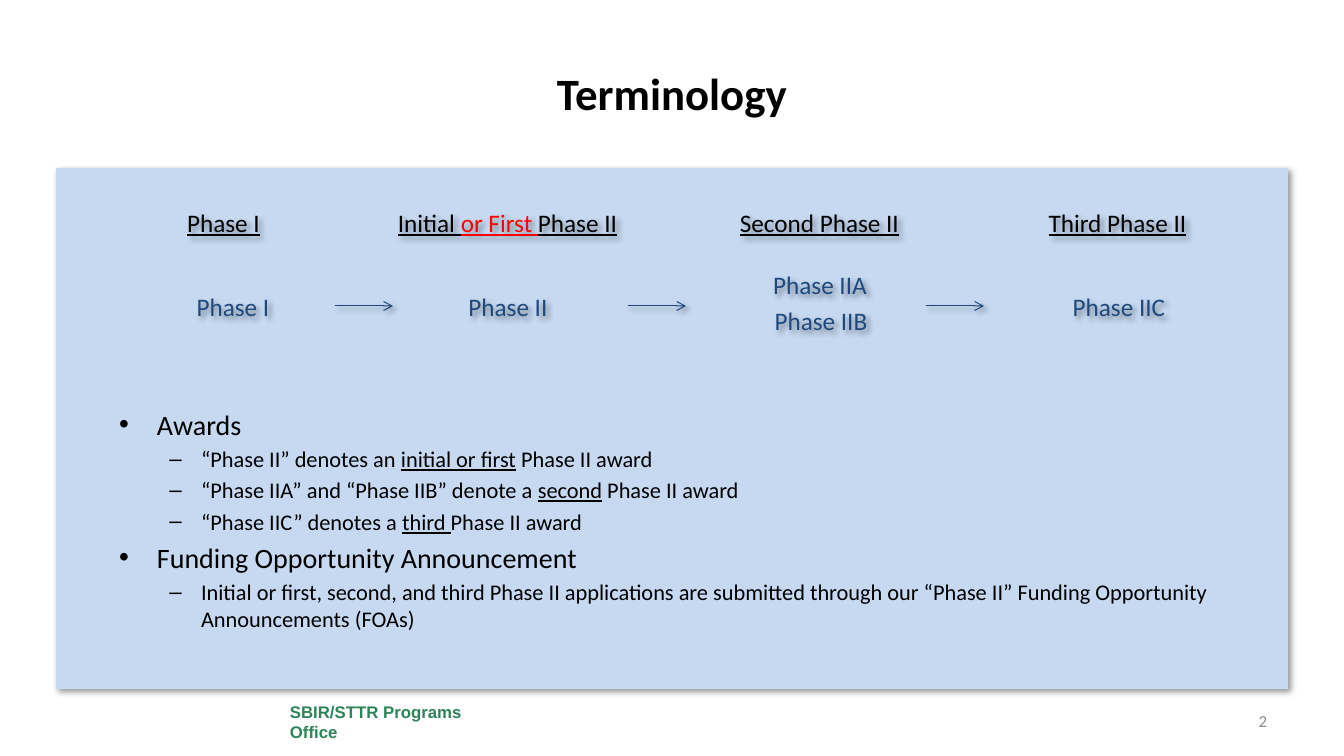
import pptx
import pptx.dml.color
import pptx.enum.shapes
import pptx.enum.text
import pptx.oxml
import pptx.oxml.ns
import pptx.util

PX = 914400 / 100.8  # EMU in one px
COLOURS = {
    "panel": "C6D9F1", "white": "FFFFFF", "black": "000000", "red": "FF0000",
    "navy": "1F497D", "green": "2C8458", "grey": "8C8C8C",
}
ALIGN = pptx.enum.text.PP_ALIGN
ANCHOR = pptx.enum.text.MSO_ANCHOR
RECTANGLE = pptx.enum.shapes.MSO_SHAPE.RECTANGLE
SHADOW = (
    f'<a:effectLst {pptx.oxml.ns.nsdecls("a")}>'
    '<a:outerShdw blurRad="50800" dist="38100" dir="2700000" algn="tl" rotWithShape="0">'
    f'<a:srgbClr val="{COLOURS["black"]}"><a:alpha val="40000"/></a:srgbClr>'
    '</a:outerShdw></a:effectLst>'
)

# Heading runs, then terms as (offset x, offset y, text) from the heading's corner
PHASES = [
    (90, [("Phase I", "black")], [(28, 86, "Phase I")]),
    (374, [("Initial ", "black"), ("or First ", "red"), ("Phase II", "black")],
     [(19, 86, "Phase II")]),
    (686, [("Second Phase II", "black")],
     [(19, 64, "Phase IIA"), (20, 100, "Phase IIB")]),
    (984, [("Third Phase II", "black")], [(20, 86, "Phase IIC")]),
]
# Level and runs of each list item; every second run is underlined
ITEMS = [
    (0, ["Awards"]),
    (1, ["“Phase II” denotes an ", "initial or first", " Phase II award"]),
    (1, ["“Phase IIA” and “Phase IIB” denote a ", "second", " Phase II award"]),
    (1, ["“Phase IIC” denotes a ", "third ", "Phase II award"]),
    (0, ["Funding Opportunity Announcement"]),
    (1, ["Initial or first, second, and third Phase II applications are submitted "
         "through our “Phase II” Funding Opportunity Announcements (FOAs)"]),
]


def px(*lengths):
    return [round(length * PX) for length in lengths]


def colour(name):
    return pptx.dml.color.RGBColor.from_string(COLOURS[name])


def add_shadow(shape):
    shape.element.spPr.append(pptx.oxml.parse_xml(SHADOW))


def add_run(para, text, size, tint, **formats):
    span = para.add_run()
    span.text = text
    span.font.color.rgb = colour(tint)
    values = {"name": "Calibri", "size": pptx.util.Pt(size), **formats}
    for name, value in values.items():
        setattr(span.font, name, value)


def set_frame(shape, anchor):
    frame = shape.text_frame
    values = {"word_wrap": True, "vertical_anchor": anchor,
              "auto_size": pptx.enum.text.MSO_AUTO_SIZE.NONE}
    for name, value in values.items():
        setattr(frame, name, value)
    return frame.paragraphs[0]


def add_label(page, box, align, anchor=ANCHOR.MIDDLE):
    label = page.shapes.add_textbox(*px(*box))
    para = set_frame(label, anchor)
    para.alignment = align
    return label, para


def add_rectangle(page, box, fill):
    shape = page.shapes.add_shape(RECTANGLE, *px(*box))
    shape.fill.solid()
    shape.fill.fore_color.rgb = colour(fill)
    shape.line.fill.background()
    return shape


def place(placeholder, box):
    """Move a placeholder to the box and to the front."""
    names = ("left", "top", "width", "height")
    for name, value in zip(names, px(*box)):
        setattr(placeholder, name, value)
    placeholder.element.getparent().append(placeholder.element)


def add_title(page, box):
    place(page.shapes.title, box)
    para = set_frame(page.shapes.title, ANCHOR.MIDDLE)
    para.alignment = ALIGN.CENTER
    add_run(para, "Terminology", 32, "black", bold=True)


def add_footer(page, box):
    left, top, width, height = box
    # Office name
    office = add_rectangle(page, (left, top, 213, height), "white")
    office.shadow.inherit = False
    para = set_frame(office, ANCHOR.MIDDLE)
    para.alignment = ALIGN.LEFT
    add_run(para, "SBIR/STTR Programs Office", 12, "green", name="Arial", bold=True)
    # Page number
    para = add_label(page, (left + width - 213, top + 3, 213, 40), ALIGN.RIGHT)[1]
    add_run(para, "2", 12, "grey")


def add_arrow(page, left, top):
    arrow = page.shapes.add_connector(
        pptx.enum.shapes.MSO_CONNECTOR.STRAIGHT, *px(left, top, left + 58, top))
    arrow.line.color.rgb = colour("navy")
    arrow.line.width = pptx.util.Pt(0.75)
    arrow.line._get_or_add_ln().append(pptx.oxml.parse_xml(
        f'<a:tailEnd {pptx.oxml.ns.nsdecls("a")} type="arrow"/>'))
    add_shadow(arrow)


def add_phases(page, box):
    top = box[1]
    for left, heading, terms in PHASES:
        label, para = add_label(page, (left, top, 267, 44), ALIGN.CENTER)
        add_shadow(label)
        for text, tint in heading:
            add_run(para, text, 18, tint, underline=True)
        for across, down, text in terms:
            label, para = add_label(page, (left + across, top + down, 230, 40),
                                    ALIGN.CENTER, ANCHOR.TOP)
            add_shadow(label)
            add_run(para, text, 18, "navy")
    for left in (335, 628, 926):
        add_arrow(page, left, top + 106)


def add_list(page, box):
    body = page.placeholders[1]
    place(body, box)
    para = set_frame(body, ANCHOR.TOP)
    para.space_before = pptx.util.Pt(0)
    for index, (level, texts) in enumerate(ITEMS):
        if index:
            para = body.text_frame.add_paragraph()
        para.level = level
        for position, text in enumerate(texts):
            add_run(para, text, 16 if level else 20, "black",
                    underline=position % 2 == 1)


def main():
    deck = pptx.Presentation()
    deck.slide_width, deck.slide_height = px(1344, 756)
    page = deck.slides.add_slide(deck.slide_layouts[1])
    add_shadow(add_rectangle(page, (56, 168, 1232, 521), "panel"))
    add_footer(page, (280, 698, 997, 48))
    add_title(page, (67, 30, 1210, 126))
    add_phases(page, (90, 200, 1161, 140))
    add_list(page, (109, 402, 1134, 290))
    deck.save("out.pptx")


if __name__ == "__main__":
    main()
